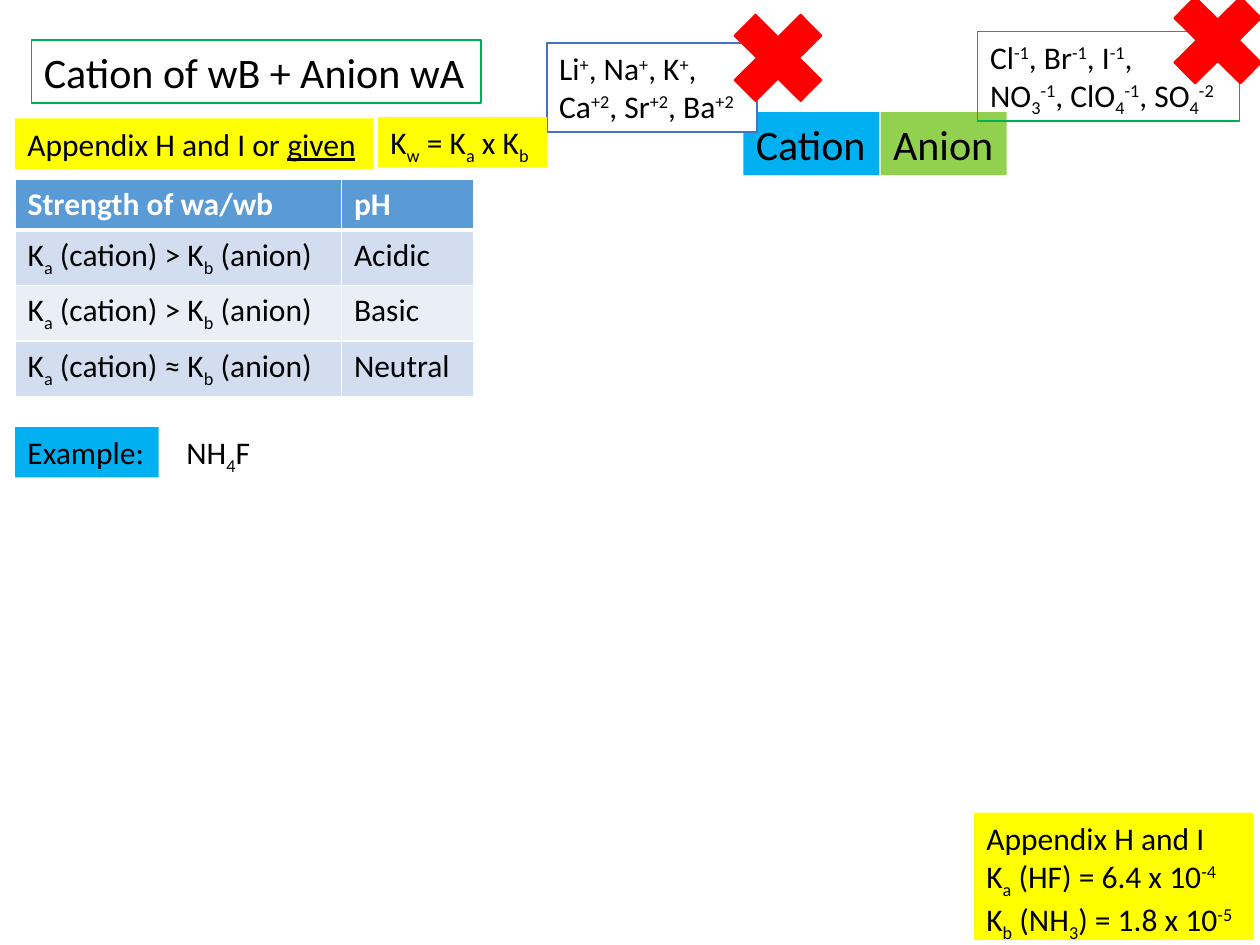
from enum import Enum

from lxml.etree import SubElement
from pptx import Presentation
from pptx.dml.color import RGBColor
from pptx.enum.shapes import MSO_SHAPE
from pptx.enum.text import MSO_AUTO_SIZE
from pptx.oxml.ns import qn
from pptx.util import Inches, Pt


class Theme:
    FONT = "Calibri"
    TITLE, BODY = Pt(24), Pt(18)
    BLACK = RGBColor(0x00, 0x00, 0x00)
    WHITE = RGBColor(0xFF, 0xFF, 0xFF)
    RED = RGBColor(0xFF, 0x00, 0x00)
    YELLOW = RGBColor(0xFF, 0xFF, 0x00)
    SKY = RGBColor(0x00, 0xB0, 0xF0)
    LIME = RGBColor(0x92, 0xD0, 0x50)
    GREEN = RGBColor(0x00, 0xB0, 0x50)
    BLUE = RGBColor(0x44, 0x72, 0xC4)
    HEADER = RGBColor(0x5B, 0x9B, 0xD5)
    BANDS = (RGBColor(0xEA, 0xEF, 0xF7), RGBColor(0xD2, 0xDE, 0xEF))


class Mark(Enum):
    """First character of a run that changes how it is set."""
    SUBSCRIPT = "_"
    SUPERSCRIPT = "^"
    UNDERLINE = "~"


BASELINES = {Mark.SUBSCRIPT.value: "-25000", Mark.SUPERSCRIPT.value: "30000"}


def write(frame, paragraphs, size=Theme.BODY, color=Theme.BLACK, bold=False):
    for index, pieces in enumerate(paragraphs):
        paragraph = frame.paragraphs[0] if index == 0 else frame.add_paragraph()
        for piece in pieces:
            run = paragraph.add_run()
            font = run.font
            font.name, font.size, font.bold = Theme.FONT, size, bold
            font.color.rgb = color
            mark = piece[0]
            if mark in BASELINES:
                run._r.get_or_add_rPr().set("baseline", BASELINES[mark])
            elif mark == Mark.UNDERLINE.value:
                font.underline = True
            else:
                mark = ""
            run.text = piece[len(mark):]


def add_box(slide, place, paragraphs, size=Theme.BODY, fill=None, line=None, weight=1):
    box = slide.shapes.add_textbox(*[Inches(value) for value in place])
    if fill is not None:
        box.fill.solid()
        box.fill.fore_color.rgb = fill
    if line is not None:
        box.line.color.rgb = line
        box.line.width = Pt(weight)
    box.text_frame.word_wrap = False
    box.text_frame.auto_size = MSO_AUTO_SIZE.SHAPE_TO_FIT_TEXT
    write(box.text_frame, paragraphs, size)


presentation = Presentation()
presentation.slide_width, presentation.slide_height = Inches(10), Inches(7.5)
slide = presentation.slides.add_slide(presentation.slide_layouts[6])

# Title and the cation/anion pair
add_box(slide, (0.25, 0.32, 3.57, 0.5), [["Cation of wB + Anion wA"]],
        Theme.TITLE, line=Theme.GREEN)
add_box(slide, (5.9, 0.89, 1.08, 0.5), [["Cation"]], Theme.TITLE, Theme.SKY)
add_box(slide, (6.99, 0.89, 1, 0.5), [["Anion"]], Theme.TITLE, Theme.LIME)

# Ions that are ruled out
add_box(slide, (4.34, 0.34, 1.67, 0.71), [
    ["Li", "^+", ", Na", "^+", ", K", "^+", ","],
    ["Ca", "^+2", ", Sr", "^+2", ", Ba", "^+2"],
], fill=Theme.WHITE, line=Theme.BLUE)
add_box(slide, (7.76, 0.25, 2.08, 0.71), [
    ["Cl", "^-1", ", Br", "^-1", ", I", "^-1", ","],
    ["NO", "_3", "^-1", ", ClO", "_4", "^-1", ", SO", "_4", "^-2"],
], line=Theme.GREEN, weight=0.75)

# Example salt
add_box(slide, (0.12, 3.39, 1.14, 0.4), [["Example:"]], fill=Theme.SKY)
add_box(slide, (1.38, 3.39, 0.72, 0.4), [["NH", "_4", "F"]])

# Crosses over the ion lists
for left, top in ((9.16, -0.18), (5.67, -0.04)):
    cross = slide.shapes.add_shape(MSO_SHAPE.MATH_MULTIPLY, Inches(left), Inches(top),
                                   Inches(1.01), Inches(1))
    cross.shadow.inherit = False
    cross.fill.solid()
    cross.fill.fore_color.rgb = Theme.RED
    cross.line.color.rgb = Theme.RED
    cross.line.width = Pt(1)

# Table of strength against pH
rows = [(["Strength of wa/wb"], "pH")]
for sign, result in ((">", "Acidic"), (">", "Basic"), ("≈", "Neutral")):
    rows.append((["K", "_a", f" (cation) {sign} K", "_b", " (anion)"], result))
table = slide.shapes.add_table(len(rows), 2, Inches(0.12), Inches(1.42),
                               Inches(3.64), Inches(1.62)).table
for column, width in zip(table.columns, (2.59, 1.05)):
    column.width = Inches(width)
for row_index, (strength, result) in enumerate(rows):
    is_header = row_index == 0
    for column_index, pieces in enumerate((strength, [result])):
        cell = table.cell(row_index, column_index)
        properties = cell._tc.get_or_add_tcPr()
        for side in ("lnL", "lnR", "lnT", "lnB"):
            header_rule = (row_index, side) in ((0, "lnB"), (1, "lnT"))
            border = SubElement(properties, qn(f"a:{side}"),
                                w=str(Pt(3 if header_rule else 1)))
            SubElement(SubElement(border, qn("a:solidFill")), qn("a:srgbClr"),
                       val=str(Theme.WHITE))
        cell.fill.solid()
        cell.fill.fore_color.rgb = Theme.HEADER if is_header else Theme.BANDS[row_index % 2]
        write(cell.text_frame, [pieces],
              color=Theme.WHITE if is_header else Theme.BLACK, bold=is_header)

# Sources and constants
add_box(slide, (0.12, 0.94, 2.84, 0.4), [["Appendix H and I or ", "~given"]],
        fill=Theme.YELLOW)
add_box(slide, (3, 0.93, 1.34, 0.4), [["K", "_w", " = K", "_a", " x K", "_b"]],
        fill=Theme.YELLOW)
add_box(slide, (7.73, 6.45, 2.22, 1.01), [
    ["Appendix H and I"],
    ["K", "_a", " (HF) = 6.4 x 10", "^-4"],
    ["K", "_b", " (NH", "_3", ") = 1.8 x 10", "^-5"],
], fill=Theme.YELLOW)

presentation.save("out.pptx")
